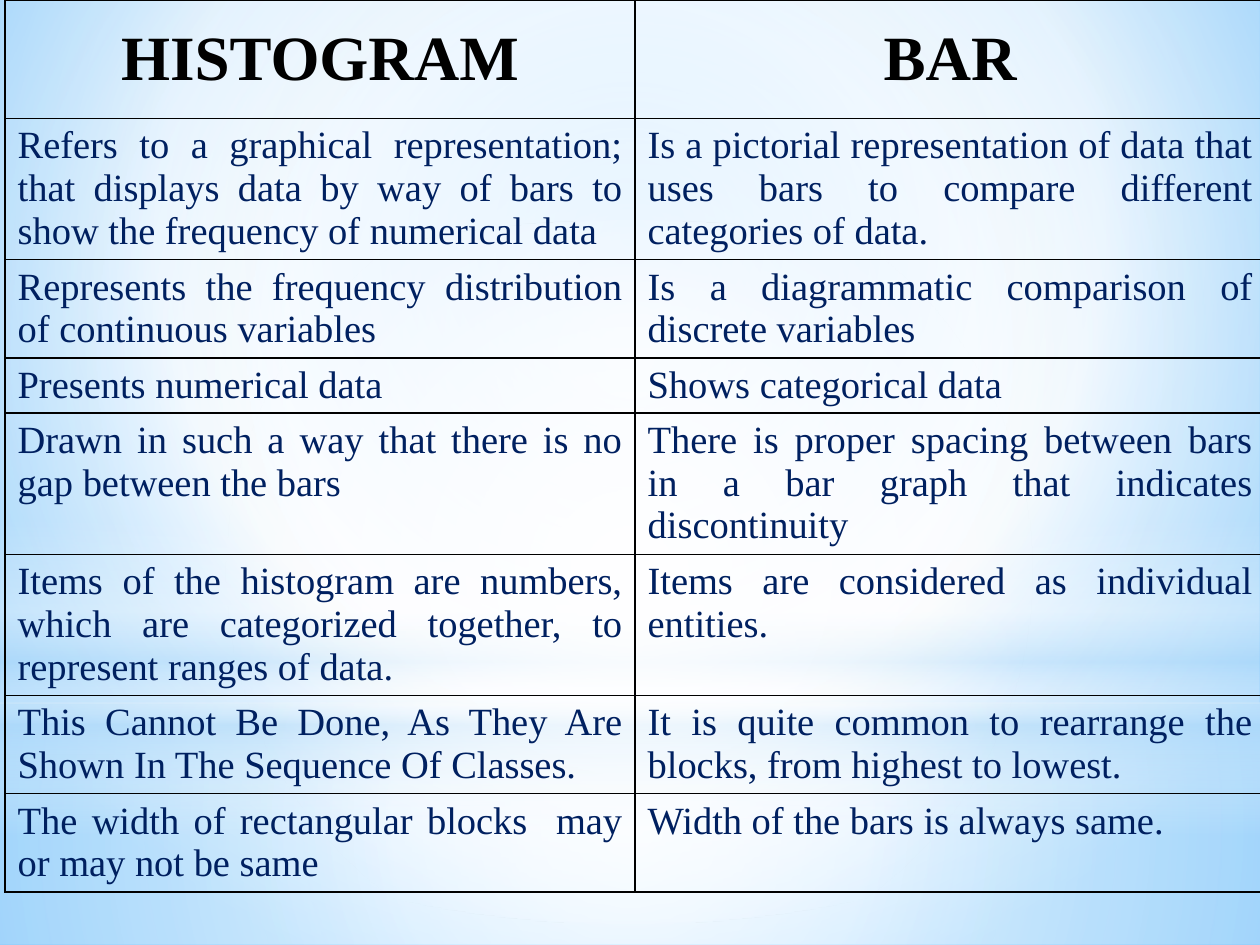
from lxml.etree import SubElement
from pptx import Presentation
from pptx.dml.color import RGBColor
from pptx.enum.shapes import MSO_SHAPE
from pptx.enum.text import MSO_ANCHOR, PP_ALIGN
from pptx.oxml.ns import qn
from pptx.util import Inches, Pt

WIDTH, HEIGHT = Inches(10), Inches(7.5)
COLORS = {
    "white": "FFFFFF", "haze": "B4DCFA", "sky": "9ED5FF", "azure": "5BB9FF",
    "ink": "000000", "navy": "002060",
}
CENTER = (50, 50, 50, 50)
GLOWS = [
    (MSO_SHAPE.RECTANGLE, (0, 0.744, 1, 0.256),
     [(0, "white", 91), (37, "white", 76), (100, "haze", 79)], CENTER),
    (MSO_SHAPE.RECTANGLE, (0, 0, 1, 0.744),
     [(0, "white", 89), (48, "white", 62), (100, "haze", 79)], CENTER),
    (MSO_SHAPE.RECTANGLE, (0, 0.55, 1, 0.333),
     [(0, "white", 0), (29, "white", 30), (45, "haze", 40),
      (55, "white", 26), (65, "haze", 60), (100, "white", 0)], None),
    (MSO_SHAPE.OVAL, (0, 0.233, 1, 0.744),
     [(0, "white", 100), (56, "white", 0)], CENTER),
]
HEADINGS = ("HISTOGRAM", "BAR")
COMPARISONS = [
    (3, "Refers to a graphical representation; that displays data by way of bars "
        "to show the frequency of numerical data",
     "Is a pictorial representation of data that uses bars to compare different "
     "categories of data."),
    (2, "Represents the frequency distribution of continuous variables",
     "Is a diagrammatic comparison of discrete variables"),
    (1, "Presents numerical data", "Shows categorical data"),
    (3, "Drawn in such a way that there is no gap between the bars",
     "There is proper spacing between bars in a bar graph that indicates "
     "discontinuity"),
    (3, "Items of the histogram are numbers, which are categorized together, to "
        "represent ranges of data.",
     "Items are considered as individual entities."),
    (2, "This Cannot Be Done, As They Are Shown In The Sequence Of Classes.",
     "It is quite common to rearrange the blocks, from highest to lowest."),
    (2, "The width of rectangular blocks  may or may not be same",
     "Width of the bars is always same."),
]
HEADING_HEIGHT, LINE_HEIGHT, ROW_PADDING = Inches(0.94), Inches(0.34), Inches(0.1)


def set_gradient(fill, owner, stops, focus=None):
    """Fill with colour stops, circular around a focus or else downwards."""
    fill.gradient()
    gradient = owner.find(".//" + qn("a:gradFill"))
    gradient.clear()
    gradient.set("rotWithShape", "1")
    stop_list = SubElement(gradient, qn("a:gsLst"))
    for position, color, opacity in stops:
        stop = SubElement(stop_list, qn("a:gs"), pos=str(position * 1000))
        tint = SubElement(stop, qn("a:srgbClr"), val=COLORS[color])
        if opacity < 100:
            SubElement(tint, qn("a:alpha"), val=str(opacity * 1000))
    if focus:
        circle = SubElement(gradient, qn("a:path"), path="circle")
        insets = {side: str(share * 1000) for side, share in zip("ltrb", focus)}
        SubElement(circle, qn("a:fillToRect"), **insets)
    else:
        SubElement(gradient, qn("a:lin"), ang="5400000", scaled="0")


def add_backdrop(slide, width, height):
    """Paint the background and its soft glows over the given area."""
    set_gradient(slide.background.fill, slide.element,
                 [(0, "sky", 100), (60, "white", 100), (100, "azure", 100)],
                 (20, 10, 20, 60))
    for kind, (left, top, across, down), stops, focus in GLOWS:
        glow = slide.shapes.add_shape(kind, int(left * width), int(top * height),
                                      int(across * width), int(down * height))
        glow.shadow.inherit = False
        glow.line.fill.background()
        set_gradient(glow.fill, glow.element, stops, focus)


def write_text(cell, text, size=22, color="navy", bold=False,
               align=PP_ALIGN.JUSTIFY, anchor=MSO_ANCHOR.TOP):
    """Write formatted text into a cell."""
    cell.vertical_anchor = anchor
    paragraph = cell.text_frame.paragraphs[0]
    paragraph.alignment = align
    run = paragraph.add_run()
    run.text = text
    run.font.name = "Times New Roman"
    run.font.size = Pt(size)
    run.font.bold = bold
    run.font.color.rgb = RGBColor.from_string(COLORS[color])


def outline_cell(cell):
    """Leave a cell unfilled, with a thin border on every side."""
    properties = cell._tc.get_or_add_tcPr()
    for side in ("lnL", "lnR", "lnT", "lnB"):
        border = SubElement(properties, qn("a:" + side), w=str(Pt(1)))
        paint = SubElement(border, qn("a:solidFill"))
        SubElement(paint, qn("a:srgbClr"), val=COLORS["ink"])
    cell.fill.background()


def add_comparison(slide, left, top, width):
    """Place the two-column comparison, each row as high as its lines of text."""
    heights = [HEADING_HEIGHT] + [ROW_PADDING + lines * LINE_HEIGHT
                                  for lines, *_ in COMPARISONS]
    table = slide.shapes.add_table(len(heights), len(HEADINGS), left, top,
                                   width, sum(heights)).table
    table.first_row = table.horz_banding = False
    for row, height in zip(table.rows, heights):
        row.height = height
    for column, heading in enumerate(HEADINGS):
        write_text(table.cell(0, column), heading, size=36, color="ink", bold=True,
                   align=PP_ALIGN.CENTER, anchor=MSO_ANCHOR.MIDDLE)
        for row, (_, *statements) in enumerate(COMPARISONS, start=1):
            write_text(table.cell(row, column), statements[column])
    for cell in table.iter_cells():
        outline_cell(cell)


def main():
    """Build and save the slide."""
    deck = Presentation()
    deck.slide_width, deck.slide_height = WIDTH, HEIGHT
    slide = deck.slides.add_slide(deck.slide_layouts[6])
    add_backdrop(slide, WIDTH, HEIGHT)
    add_comparison(slide, int(0.004 * WIDTH), 0, WIDTH)
    deck.save("out.pptx")


if __name__ == "__main__":
    main()
